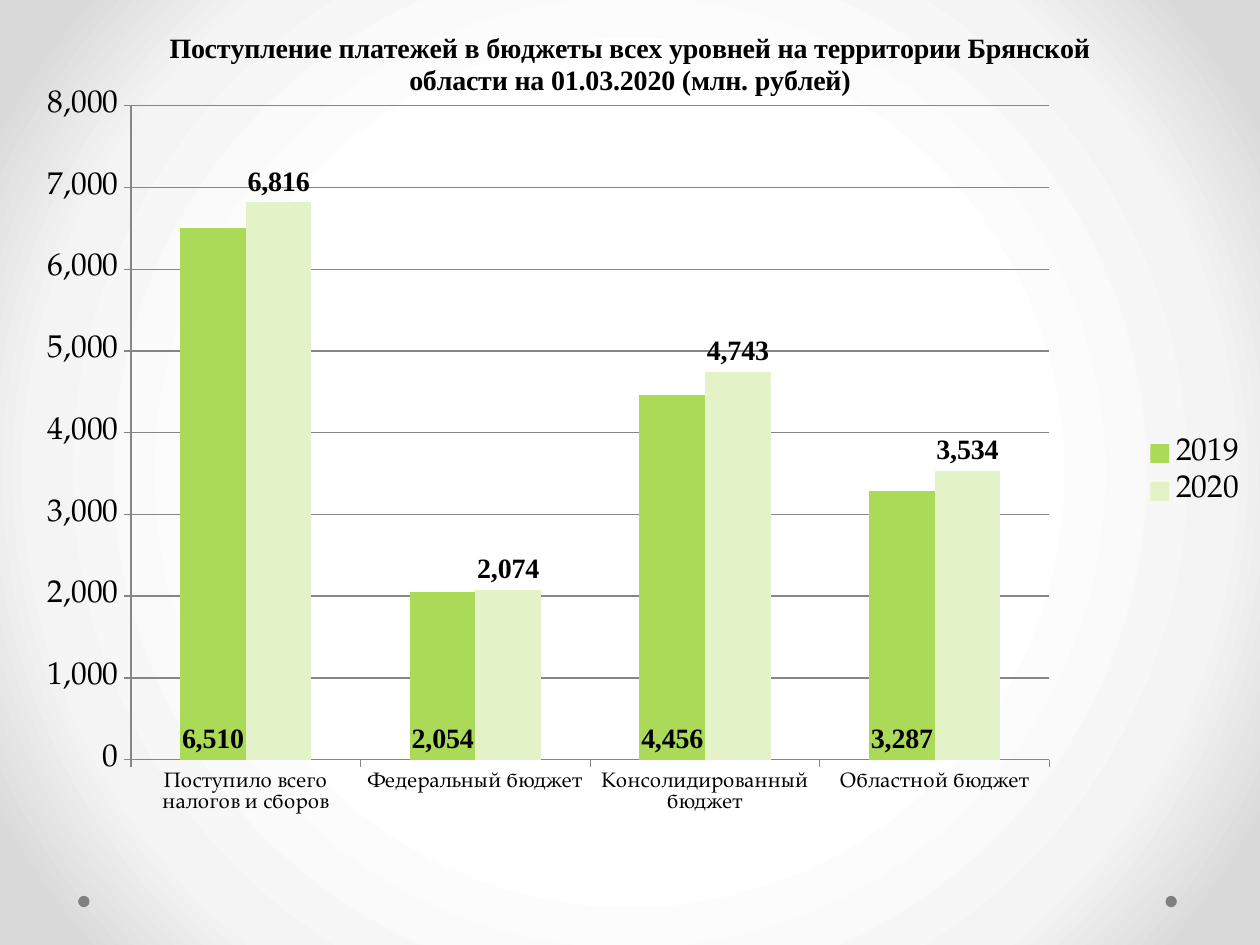
from pptx import Presentation
from pptx.chart.data import CategoryChartData
from pptx.dml.color import RGBColor
from pptx.enum.chart import XL_CHART_TYPE as ChartType, XL_LABEL_POSITION as LabelPosition
from pptx.enum.chart import XL_LEGEND_POSITION as LegendPosition, XL_TICK_MARK as TickMark
from pptx.enum.shapes import MSO_SHAPE as Shape
from pptx.oxml import parse_xml
from pptx.oxml.ns import nsdecls, qn
from pptx.util import Inches, Pt


def color(value):
    return RGBColor.from_string(value)


def set_font(font, name, size, bold=False):
    font.name = name
    font.size = Pt(size)
    font.bold = bold
    font.color.rgb = color("000000")


BODY_FONT = "TeX Gyre Pagella"
LABEL_FONT = "Times New Roman"
NUMBER_FORMAT = "#,##0"

deck = Presentation()
deck.slide_width = Inches(10)
deck.slide_height = Inches(7.5)
slide = deck.slides.add_slide(deck.slide_layouts[6])

slide.background.fill.gradient()
gradient = slide.element.find(".//" + qn("a:gradFill"))
stops = "".join(
    f'<a:gs pos="{percent * 1000}"><a:srgbClr val="{value}"/></a:gs>'
    for percent, value in [(50, "FFFFFF"), (76, "F4F4F4"), (92, "DADADA")]
)
gradient.getparent().replace(gradient, parse_xml(
    f'<a:gradFill {nsdecls("a")} rotWithShape="1"><a:gsLst>{stops}</a:gsLst>'
    '<a:path path="circle"><a:fillToRect l="50000" t="50000" r="50000" b="50000"/></a:path>'
    '</a:gradFill>'
))

for left in (9.25, 0.62):
    dot = slide.shapes.add_shape(Shape.OVAL, Inches(left), Inches(7.11), Inches(0.09), Inches(0.09))
    dot.shadow.inherit = False
    dot.fill.solid()
    dot.fill.fore_color.rgb = color("808080")
    dot.line.fill.background()

data = CategoryChartData(number_format=NUMBER_FORMAT)
data.categories = [
    "Поступило всего налогов и сборов",
    "Федеральный бюджет",
    "Консолидированный бюджет",
    "Областной бюджет",
]
data.add_series("2019", [6510, 2054, 4456, 3287])
data.add_series("2020", [6816, 2074, 4743, 3534])
chart = slide.shapes.add_chart(
    ChartType.COLUMN_CLUSTERED, 0, 0, deck.slide_width, deck.slide_height, data
).chart
set_font(chart.font, BODY_FONT, 18)

chart.has_title = True
title = chart.chart_title
title.include_in_layout = False
title.text_frame.text = (
    "Поступление платежей в бюджеты всех уровней на территории Брянской "
    "области на 01.03.2020 (млн. рублей)"
)
set_font(title.text_frame.paragraphs[0].runs[0].font, LABEL_FONT, 16, True)

chart.has_legend = True
chart.legend.position = LegendPosition.RIGHT
chart.legend.include_in_layout = False
set_font(chart.legend.font, BODY_FONT, 18)

value_axis = chart.value_axis
value_axis.minimum_scale = 0
value_axis.maximum_scale = 8000
value_axis.major_unit = 1000
value_axis.has_major_gridlines = True
value_axis.major_gridlines.format.line.color.rgb = color("868686")
value_axis.tick_labels.number_format = NUMBER_FORMAT
value_axis.tick_labels.number_format_is_linked = False
for axis, size in [(chart.category_axis, 12), (value_axis, 18)]:
    axis.major_tick_mark = TickMark.OUTSIDE
    axis.minor_tick_mark = TickMark.NONE
    axis.format.line.color.rgb = color("868686")
    set_font(axis.tick_labels.font, BODY_FONT, size)

plot = chart.plots[0]
plot.gap_width = 150
plot.overlap = 0
plot.vary_by_categories = False
styles = [("ABD958", LabelPosition.INSIDE_BASE), ("E3F2C7", LabelPosition.OUTSIDE_END)]
for series, (fill, position) in zip(plot.series, styles):
    series.format.fill.solid()
    series.format.fill.fore_color.rgb = color(fill)
    labels = series.data_labels
    labels.show_value = True
    labels.position = position
    labels.number_format = NUMBER_FORMAT
    labels.number_format_is_linked = False
    set_font(labels.font, LABEL_FONT, 16, True)

plot_area = chart.element.find(".//" + qn("c:plotArea"))
for layout in plot_area.findall(qn("c:layout")):
    plot_area.remove(layout)
bounds = "".join(
    f'<c:{side} val="{share}"/>'
    for side, share in [("x", 0.104), ("y", 0.112), ("w", 0.729), ("h", 0.692)]
)
plot_area.insert(0, parse_xml(
    f'<c:layout {nsdecls("c")}><c:manualLayout><c:layoutTarget val="inner"/>'
    f'<c:xMode val="edge"/><c:yMode val="edge"/>{bounds}</c:manualLayout></c:layout>'
))

deck.save("out.pptx")
